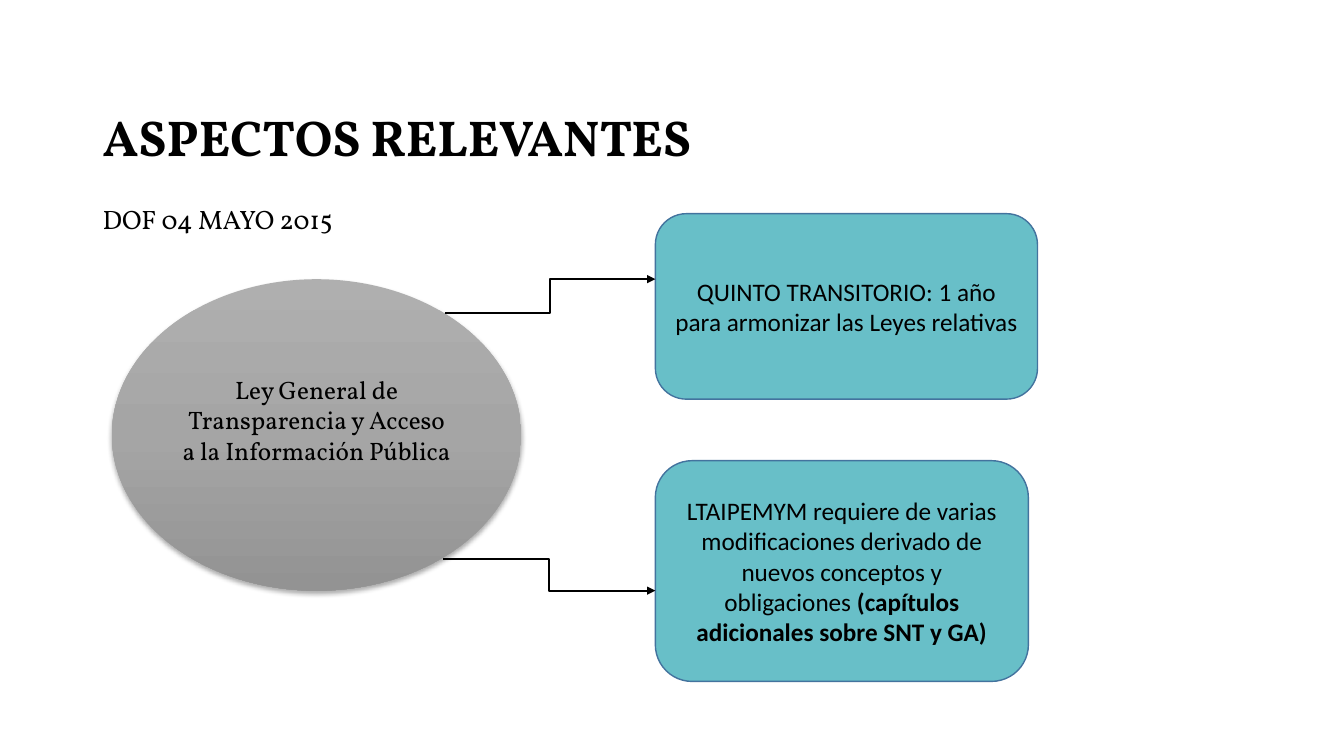
from copy import deepcopy
from dataclasses import dataclass

from pptx import Presentation
from pptx.dml.color import RGBColor
from pptx.enum.shapes import MSO_CONNECTOR, MSO_SHAPE
from pptx.enum.text import MSO_ANCHOR, PP_ALIGN
from pptx.oxml import parse_xml
from pptx.oxml.ns import nsdecls
from pptx.util import Inches, Pt


@dataclass(frozen=True)
class Theme:
    ink: str = "000000"
    teal: str = "68BFC8"
    edge: str = "43739E"
    grays: tuple = ("AFAFAF", "A5A5A5", "939393")
    serif: str = "Vollkorn"
    sans: str = "Calibri"
    title: int = 36
    date: int = 19
    body: int = 18


THEME = Theme()


def color(code):
    return RGBColor.from_string(code)


def effects(shape, inner=""):
    """Replace the theme effects of a shape with the given ones."""
    props = shape._element.spPr
    props.append(parse_xml(f"<a:effectLst {nsdecls('a')}>{inner}</a:effectLst>"))


def write(shape, text, face, size, bold=None, align=PP_ALIGN.CENTER,
          anchor=MSO_ANCHOR.MIDDLE, strong=""):
    """Fill the shape with one paragraph, ending in an optional bold run."""
    frame = shape.text_frame
    frame.word_wrap = True
    frame.vertical_anchor = anchor
    para = frame.paragraphs[0]
    para.alignment = align
    para.add_run().text = text
    if strong:
        run = para.add_run()
        run.text = strong
        run.font.bold = True
    font = para.font
    font.name, font.size, font.bold = face, Pt(size), bold
    font.color.rgb = color(THEME.ink)
    return para


def label(slide, box, text, size, **style):
    shape = slide.shapes.add_textbox(*map(Inches, box))
    write(shape, text, THEME.serif, size, **style).line_spacing = 0.9


def oval(slide, box, text):
    shape = slide.shapes.add_shape(MSO_SHAPE.OVAL, *map(Inches, box))
    shape.line.fill.background()
    fill = shape.fill
    fill.gradient()
    fill.gradient_angle = 270
    stops = fill._fill._gradFill.gsLst
    stops.insert(1, deepcopy(stops[0]))
    for i, (stop, code) in enumerate(zip(fill.gradient_stops, THEME.grays)):
        stop.position = i / 2
        stop.color.rgb = color(code)
    effects(shape, f'<a:outerShdw blurRad="{Pt(3.5)}" dist="{Pt(2.2)}" '
                   'dir="5400000" rotWithShape="0">'
                   f'<a:srgbClr val="{THEME.ink}"><a:alpha val="32000"/>'
                   '</a:srgbClr></a:outerShdw>')
    write(shape, text, THEME.serif, THEME.body)
    shape.text_frame.margin_bottom = Inches(0.35)


def card(slide, box, text, strong=""):
    shape = slide.shapes.add_shape(MSO_SHAPE.ROUNDED_RECTANGLE, *map(Inches, box))
    shape.shadow.inherit = False
    shape.fill.solid()
    shape.fill.fore_color.rgb = color(THEME.teal)
    shape.line.color.rgb = color(THEME.edge)
    shape.line.width = Pt(1)
    write(shape, text, THEME.sans, THEME.body, strong=strong)


def arrow(slide, start, end):
    link = slide.shapes.add_connector(MSO_CONNECTOR.ELBOW,
                                      *map(Inches, start + end))
    link.line.color.rgb = color(THEME.ink)
    link.line.width = Pt(1.5)
    link.line._get_or_add_ln().append(
        parse_xml(f'<a:tailEnd {nsdecls("a")} type="triangle"/>'))
    effects(link)


def main():
    deck = Presentation()
    deck.slide_width, deck.slide_height = Inches(13.33), Inches(7.5)
    slide = deck.slides.add_slide(deck.slide_layouts[6])

    label(slide, (0.92, 0.67, 11.5, 1.45), "ASPECTOS RELEVANTES", THEME.title,
          bold=True, align=PP_ALIGN.LEFT)
    label(slide, (0.92, 2, 11.5, 4.76), "DOF 04 MAYO 2015", THEME.date,
          align=PP_ALIGN.JUSTIFY, anchor=MSO_ANCHOR.TOP)
    oval(slide, (1.11, 2.77, 4.06, 3.09),
         "Ley General de Transparencia y Acceso a la Información Pública")

    left = 6.5
    card(slide, (left, 2.12, 3.79, 1.84),
         "QUINTO TRANSITORIO: 1 año para armonizar las Leyes relativas")
    card(slide, (left, 4.57, 3.7, 2.19),
         "LTAIPEMYM requiere de varias modificaciones derivado de "
         "nuevos conceptos y obligaciones ",
         "(capítulos adicionales sobre SNT y GA)")
    arrow(slide, (4.41, 3.11), (left, 2.77))
    arrow(slide, (4.39, 5.55), (left, 5.86))
    deck.save("out.pptx")


if __name__ == "__main__":
    main()
